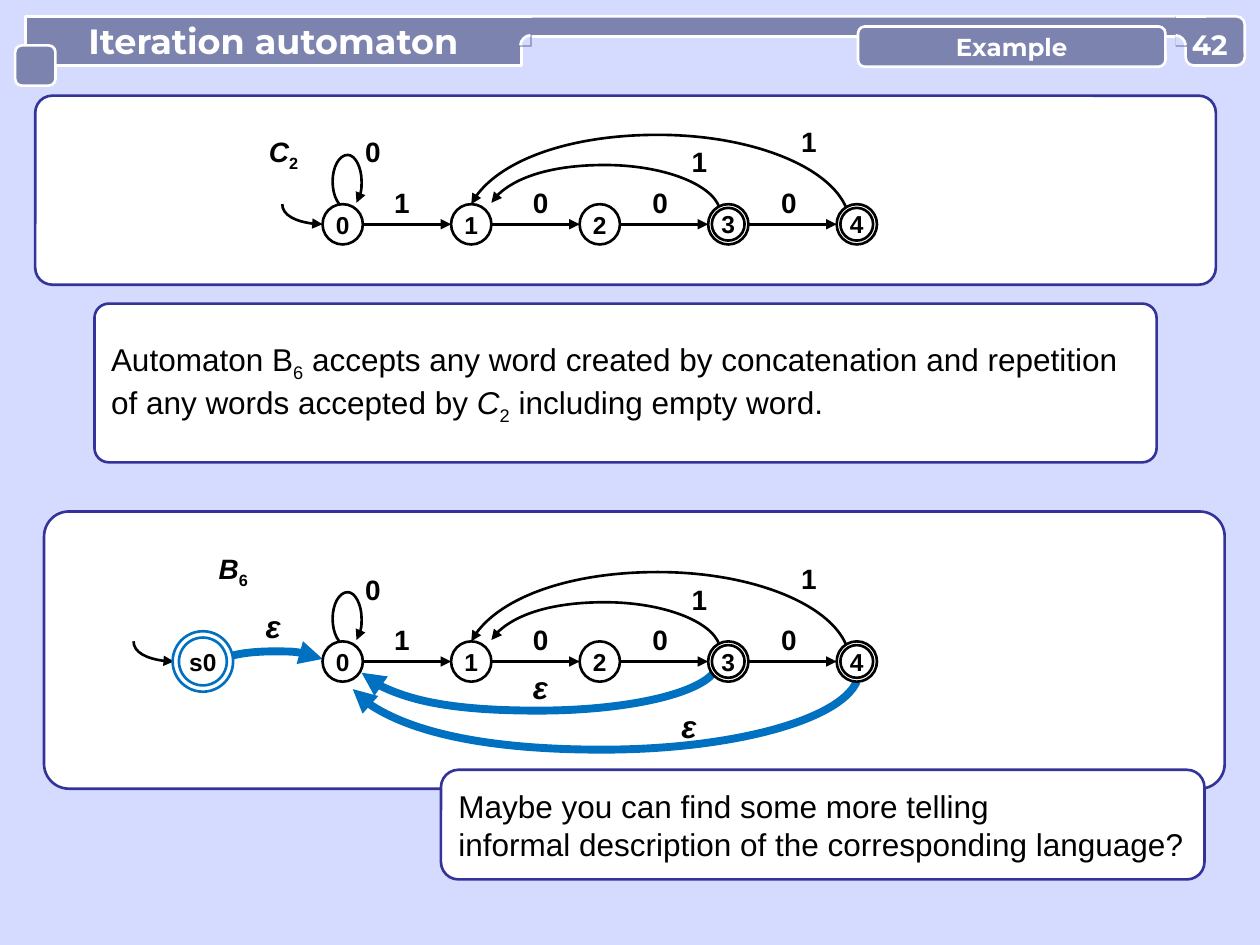
"""Build the slide on the iteration automaton B6 derived from C2."""
from dataclasses import dataclass
from typing import NamedTuple

import lxml.etree
import pptx
import pptx.dml.color
import pptx.enum.shapes
import pptx.enum.text
import pptx.oxml.ns
import pptx.util

Inches = pptx.util.Inches
Shapes = pptx.enum.shapes.MSO_SHAPE
Align = pptx.enum.text.PP_ALIGN
Anchor = pptx.enum.text.MSO_ANCHOR
qn = pptx.oxml.ns.qn

BACKGROUND, BAR, NAVY, BLUE = "D5DAFF", "7D83AF", "333399", "0070C0"
WHITE, BLACK = "FFFFFF", "000000"
AXIS, FIRST_STATE, STATE_STEP, RADIUS = 1.78, 2.72, 1.02, 0.16
LOWER = 3.47


class Box(NamedTuple):
    left: float
    top: float
    width: float
    height: float


class Span(NamedTuple):
    text: str
    italic: bool = False
    subscript: bool = False


class Label(NamedTuple):
    text: str
    left: float
    top: float


@dataclass
class Style:
    size: float
    color: str = BLACK
    name: str = "Arial"
    bold: bool = True
    align: Align = Align.CENTER
    anchor: Anchor = Anchor.MIDDLE
    wrap: bool = False
    inset: float = 0


STATE = Style(14)
EDGE = Style(16, anchor=Anchor.TOP, wrap=True)
EPSILON = Style(18, align=Align.LEFT, anchor=Anchor.TOP, inset=0.1)
PROSE = Style(18, bold=False, align=Align.LEFT, inset=0.1)

LABELS = [
    Label("0", 2.8, 1.07), Label("1", 3.03, 1.47), Label("0", 4.13, 1.47), Label("0", 5.08, 1.47),
    Label("0", 6.1, 1.47), Label("1", 5.39, 1.15), Label("1", 6.26, 0.99),
]
ENTRY = [(2.56, 1.78), (2.39, 1.78), (2.24, 1.71), (2.24, 1.62)]
LOOP = [(2.83, 1.61), (2.86, 1.57), (2.87, 1.51), (2.87, 1.44), (2.87, 1.33), (2.82, 1.23), (2.76, 1.23),
        (2.69, 1.23), (2.64, 1.33), (2.64, 1.44), (2.64, 1.56), (2.69, 1.65), (2.76, 1.66)]
RETURNS = [
    [(3.74, 1.62), (3.9, 1.3), (4.52, 1.07), (5.22, 1.07), (5.99, 1.07), (6.63, 1.34), (6.73, 1.69)],
    [(3.9, 1.61), (4, 1.44), (4.37, 1.31), (4.8, 1.31), (5.26, 1.31), (5.65, 1.46), (5.71, 1.65)],
]
EPSILON_EDGES = [
    [(2.87, 5.34), (3.03, 5.52), (3.6, 5.64), (4.27, 5.64), (4.99, 5.64), (5.6, 5.5), (5.69, 5.3)],
    [(2.8, 5.47), (3.01, 5.75), (3.83, 5.95), (4.78, 5.95), (5.8, 5.95), (6.66, 5.72), (6.8, 5.41)],
    [(2.56, 5.23), (2.52, 5.19), (2.35, 5.17), (2.17, 5.17), (1.97, 5.17), (1.8, 5.2), (1.77, 5.24)],
]


def rgb(color: str) -> pptx.dml.color.RGBColor:
    return pptx.dml.color.RGBColor.from_string(color)


def paint(shape, fill: str | None, line: str | None, width: float = 1.5) -> None:
    shape.shadow.inherit = False
    for part, color in ((shape.fill, fill), (shape.line.fill, line)):
        if color:
            part.solid()
            part.fore_color.rgb = rgb(color)
        else:
            part.background()
    if line:
        shape.line.width = pptx.util.Pt(width)


def write(shape, lines: list[list[Span]], style: Style) -> None:
    frame = shape.text_frame
    frame.auto_size = pptx.enum.text.MSO_AUTO_SIZE.NONE
    frame.word_wrap, frame.vertical_anchor = style.wrap, style.anchor
    frame.margin_left = frame.margin_right = Inches(style.inset)
    frame.margin_top = frame.margin_bottom = Inches(style.inset / 2)
    for index, spans in enumerate(lines):
        para = frame.add_paragraph() if index else frame.paragraphs[0]
        para.alignment = style.align
        font = para.font
        font.name, font.size, font.bold = style.name, pptx.util.Pt(style.size), style.bold
        font.color.rgb = rgb(style.color)
        for item in spans:
            span = para.add_run()
            span.text = item.text
            if item.italic:
                span.font.italic = True
            if item.subscript:
                span.font._element.set("baseline", "-25000")


def add_box(page, kind: Shapes, box: Box, fill: str, line: str | None, corner: float | None = None):
    shape = page.shapes.add_shape(kind, *map(Inches, box))
    if corner is not None:
        shape.adjustments[0] = corner
    paint(shape, fill, line)
    return shape


def add_text(page, box: Box, spans: list[Span], style: Style) -> None:
    write(page.shapes.add_textbox(*map(Inches, box)), [spans], style)


def add_arrowhead(shape, end: str) -> None:
    lxml.etree.SubElement(shape.line._get_or_add_ln(), qn(f"a:{end}"), type="triangle")


def add_line(page, start: tuple, end: tuple, color: str, arrow: bool = False) -> None:
    line = page.shapes.add_connector(pptx.enum.shapes.MSO_CONNECTOR.STRAIGHT, *map(Inches, start + end))
    line.line.color.rgb, line.line.width = rgb(color), pptx.util.Pt(1.5)
    if arrow:
        add_arrowhead(line, "tailEnd")
    lxml.etree.SubElement(line._element.spPr, qn("a:effectLst"))


def add_curve(page, points: list, line: str | None, width: float = 1.5, fill: str | None = None,
              dx: float = 0, dy: float = 0, arrow: bool = True) -> None:
    """Draw cubic segments through the points; a leftover point is joined straight."""
    start, *rest = [(Inches(x + dx), Inches(y + dy)) for x, y in points]
    builder = page.shapes.build_freeform(*start)
    builder.add_line_segments(rest, close=fill is not None)
    shape = builder.convert_to_shape()
    segments = list(shape._element.iter(qn("a:lnTo")))
    for index in range(0, len(segments) // 3 * 3, 3):
        first, second, third = segments[index:index + 3]
        first.tag = qn("a:cubicBezTo")
        for other in (second, third):
            first.append(other[0])
            other.getparent().remove(other)
    paint(shape, fill, line, width)
    if arrow:
        add_arrowhead(shape, "headEnd")


def add_state(page, name: str, x: float, y: float, radii: list[float], line: str = BLACK) -> None:
    for radius in radii:
        box = Box(x - radius, y - radius, 2 * radius, 2 * radius)
        shape = add_box(page, Shapes.OVAL, box, WHITE, line)
    write(shape, [[Span(name)]], STATE)


def add_automaton(page, dy: float, entry_dx: float) -> None:
    axis = AXIS + dy
    centers = [FIRST_STATE + STATE_STEP * index for index in range(5)]
    add_curve(page, ENTRY, BLACK, dx=entry_dx, dy=dy)
    for points in [LOOP, *RETURNS]:
        add_curve(page, points, BLACK, dy=dy)
    for left, right in zip(centers, centers[1:]):
        add_line(page, (left + RADIUS, axis), (right - RADIUS, axis), BLACK, arrow=True)
    for index, center in enumerate(centers):
        add_state(page, str(index), center, axis, [RADIUS, 0.13] if index > 2 else [RADIUS])
    for label in LABELS:
        add_text(page, Box(label.left, label.top + dy, 0.32, 0.31), [Span(label.text)], EDGE)


def add_notch(page, left: float, inner: float, outer: float) -> None:
    add_box(page, Shapes.RECTANGLE, Box(left, 0.13, 0.24, 0.24), BAR, None)
    add_line(page, (left, 0.13), (left + 0.24, 0.13), WHITE)
    arc = [(inner, 0.28), ((inner + outer) / 2, 0.28), (outer, 0.32), (outer, 0.36)]
    add_curve(page, arc + [(inner, 0.36)], None, fill=BACKGROUND, arrow=False)
    add_curve(page, arc, WHITE, arrow=False)


def add_header(page) -> None:
    title = page.shapes.title
    title.left, title.top, title.width, title.height = map(Inches, (0.2, 0.13, 3.94, 0.39))
    geometry = lxml.etree.SubElement(title._element.spPr, qn("a:prstGeom"), prst="roundRect")
    guides = lxml.etree.SubElement(geometry, qn("a:avLst"))
    lxml.etree.SubElement(guides, qn("a:gd"), name="adj", fmla="val 18800")
    paint(title, BAR, WHITE)
    write(title, [[Span("Iteration automaton")]], Style(20, WHITE, "Montserrat"))
    rounded = Shapes.ROUNDED_RECTANGLE
    add_box(page, rounded, Box(4.06, 0.13, 5.43, 0.16), BAR, WHITE, 0.5)
    add_notch(page, 3.98, 4.21, 4.13)
    add_box(page, rounded, Box(0.12, 0.36, 0.32, 0.32), BAR, WHITE, 0.17)
    add_box(page, rounded, Box(9.41, 0.13, 0.47, 0.39), BAR, WHITE, 0.17)
    add_notch(page, 9.33, 9.33, 9.41)
    topic = add_box(page, rounded, Box(6.81, 0.21, 2.44, 0.32), BAR, WHITE, 0.17)
    write(topic, [[Span("Example")]], Style(14, WHITE, "Montserrat"))
    number = Style(16, WHITE, "Montserrat", align=Align.LEFT, wrap=True)
    add_text(page, Box(9.46, 0.22, 0.4, 0.27), [Span("42")], number)


def add_panel(page, box: Box, corner: float, lines: list[list[Span]]) -> None:
    write(add_box(page, Shapes.ROUNDED_RECTANGLE, box, WHITE, NAVY, corner), lines, PROSE)


def main() -> None:
    deck = pptx.Presentation()
    deck.slide_width, deck.slide_height = Inches(10), Inches(7.5)
    page = deck.slides.add_slide(deck.slide_layouts[5])
    page.background.fill.solid()
    page.background.fill.fore_color.rgb = rgb(BACKGROUND)
    add_header(page)
    add_panel(page, Box(0.28, 0.76, 9.37, 1.5), 0.09, [])
    add_panel(page, Box(0.35, 4.06, 9.37, 2.2), 0.09, [])
    add_panel(page, Box(0.75, 2.41, 8.43, 1.26), 0.09, [
        [Span("Automaton B"), Span("6", subscript=True),
         Span(" accepts any word created by concatenation and repetition")],
        [Span("of any words accepted by "), Span("C", italic=True), Span("2", subscript=True),
         Span(" including empty word.")],
    ])
    for name, index, left, top in (("C", "2", 2.09, 1.07), ("B", "6", 1.69, 4.38)):
        add_text(page, Box(left, top, 0.32, 0.32), [Span(name, italic=True), Span(index, subscript=True)], EDGE)
    add_automaton(page, 0, 0)
    for points in EPSILON_EDGES:
        add_curve(page, points, BLUE, 4.5)
    add_automaton(page, LOWER, -1.18)
    add_state(page, "s0", 1.61, AXIS + LOWER, [0.24, 0.19], BLUE)
    for left, top in ((4.13, 5.25), (5.31, 5.56), (2.01, 4.77)):
        add_text(page, Box(left, top, 0.31, 0.4), [Span("ε", italic=True)], EPSILON)
    add_panel(page, Box(3.5, 6.11, 6.06, 0.87), 0.16, [
        [Span("Maybe you can find some more telling")],
        [Span("informal description of the corresponding language?")],
    ])
    deck.save("out.pptx")


if __name__ == "__main__":
    main()
